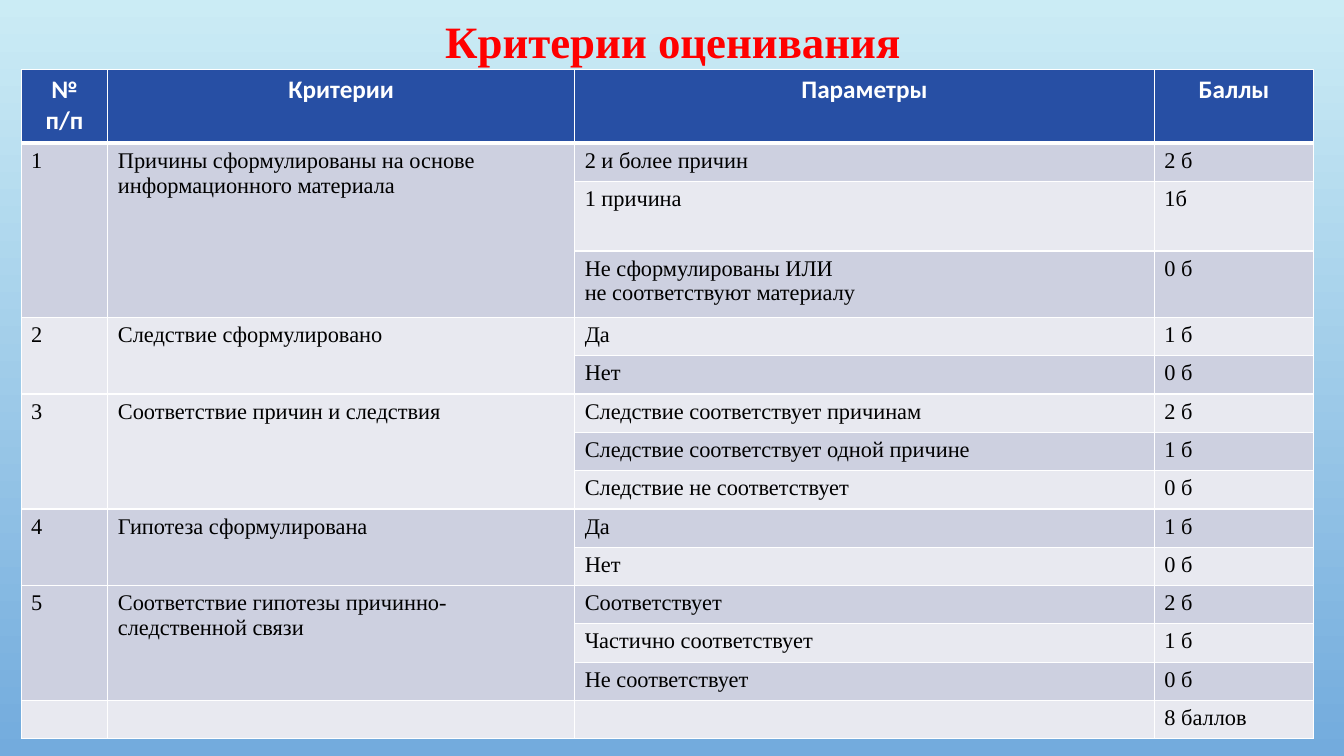
"""Build a slide with a table of grading criteria."""
from lxml import etree
from pptx import Presentation
from pptx import util as u
from pptx.dml.color import RGBColor
from pptx.enum import text
from pptx.oxml import ns

HEADERS = ["№ п/п", "Критерии", "Параметры", "Баллы"]
CRITERIA = [
    ("Причины сформулированы на основе информационного материала", [
        ("2 и более причин", "2 б"),
        ("1 причина", "1б"),
        ("Не сформулированы ИЛИ\nне соответствуют материалу", "0 б"),
    ]),
    ("Следствие сформулировано", [("Да", "1 б"), ("Нет", "0 б")]),
    ("Соответствие причин и следствия", [
        ("Следствие соответствует причинам", "2 б"),
        ("Следствие соответствует одной причине", "1 б"),
        ("Следствие не соответствует", "0 б"),
    ]),
    ("Гипотеза сформулирована", [("Да", "1 б"), ("Нет", "0 б")]),
    ("Соответствие гипотезы причинно-следственной связи", [
        ("Соответствует", "2 б"),
        ("Частично соответствует", "1 б"),
        ("Не соответствует", "0 б"),
    ]),
]
TOTAL = "8 баллов"
COLUMN_WIDTHS = [0.86, 4.63, 5.75, 1.58]
ROW_HEIGHTS = [0.73, 0.38, 0.69, 0.66] + [0.38] * 11


def color(value):
    return RGBColor.from_string(value)


def write(frame, content, size=16, font="Times New Roman", fill="000000",
          bold=False, align=text.PP_ALIGN.LEFT):
    for index, line in enumerate(content.split("\n")):
        paragraph = frame.add_paragraph() if index else frame.paragraphs[0]
        paragraph.alignment = align
        if not line:
            paragraph._p.get_or_add_endParaRPr().set("sz", str(size * 100))
            continue
        run = paragraph.add_run()
        run.text = line
        run.font.size = u.Pt(size)
        run.font.name = font
        run.font.bold = bold
        run.font.color.rgb = color(fill)


class CriteriaSlide:
    header_fill = "274FA4"
    bands = ("E8E9F0", "CDD0E0")
    border = "FFFFFF"
    header_style = dict(size=18, font="Calibri", fill="FFFFFF", bold=True,
                        align=text.PP_ALIGN.CENTER)
    title_style = dict(size=32, fill="FF0000", bold=True,
                       align=text.PP_ALIGN.CENTER)

    def __init__(self, presentation):
        self.slide = presentation.slides.add_slide(presentation.slide_layouts[6])

    def background(self, top, bottom):
        fill = self.slide.background.fill
        fill.gradient()
        fill.gradient_angle = 270
        for stop, value, position in zip(fill.gradient_stops, (top, bottom), (0, 1)):
            stop.color.rgb = color(value)
            stop.position = position

    def title(self, content, left, top, width, height):
        shape = self.slide.shapes.add_textbox(
            u.Inches(left), u.Inches(top), u.Inches(width), u.Inches(height))
        frame = shape.text_frame
        frame.word_wrap = True
        frame.margin_top = u.Inches(0.14)
        write(frame, content, **self.title_style)

    def borders(self, cell, bottom):
        properties = cell._tc.get_or_add_tcPr()
        for index, side in enumerate("LRTB"):
            width = u.Pt(bottom if side == "B" else 1)
            line = etree.Element(ns.qn(f"a:ln{side}"), w=str(width))
            solid = etree.SubElement(line, ns.qn("a:solidFill"))
            etree.SubElement(solid, ns.qn("a:srgbClr"), val=self.border)
            properties.insert(index, line)

    def cell(self, cell, row):
        self.borders(cell, 1 if row else 3)
        cell.fill.solid()
        cell.fill.fore_color.rgb = color(self.bands[row % 2] if row else self.header_fill)

    def table(self, rows, left, top):
        shape = self.slide.shapes.add_table(
            len(rows), len(COLUMN_WIDTHS), u.Inches(left), u.Inches(top),
            u.Inches(sum(COLUMN_WIDTHS)), u.Inches(sum(ROW_HEIGHTS)))
        table = shape.table
        table.first_row = table.horz_banding = False
        for column, width in zip(table.columns, COLUMN_WIDTHS):
            column.width = u.Inches(width)
        for row, height in zip(table.rows, ROW_HEIGHTS):
            row.height = u.Inches(height)
        for row, values in enumerate(rows):
            for column, value in enumerate(values):
                cell = table.cell(row, column)
                self.cell(cell, row)
                style = {} if row else self.header_style
                write(cell.text_frame, value, **style)
        return table


def main():
    presentation = Presentation()
    presentation.slide_width = u.Inches(13.33)
    presentation.slide_height = u.Inches(7.5)
    page = CriteriaSlide(presentation)
    page.background("CBECF5", "73ABDD")
    page.title("Критерии оценивания", 1.01, 0, 11.33, 3.74)

    rows, spans = [HEADERS], []
    for number, (criterion, options) in enumerate(CRITERIA, 1):
        spans.append((len(rows), len(rows) + len(options) - 1))
        for index, option in enumerate(options):
            lead = ("", "") if index else (str(number), criterion)
            rows.append([*lead, *option])
    rows.append(["", "", "", TOTAL])

    table = page.table(rows, 0.21, 0.69)
    for first, last in spans:
        for column in (0, 1):
            table.cell(first, column).merge(table.cell(last, column))
    presentation.save("out.pptx")


if __name__ == "__main__":
    main()
